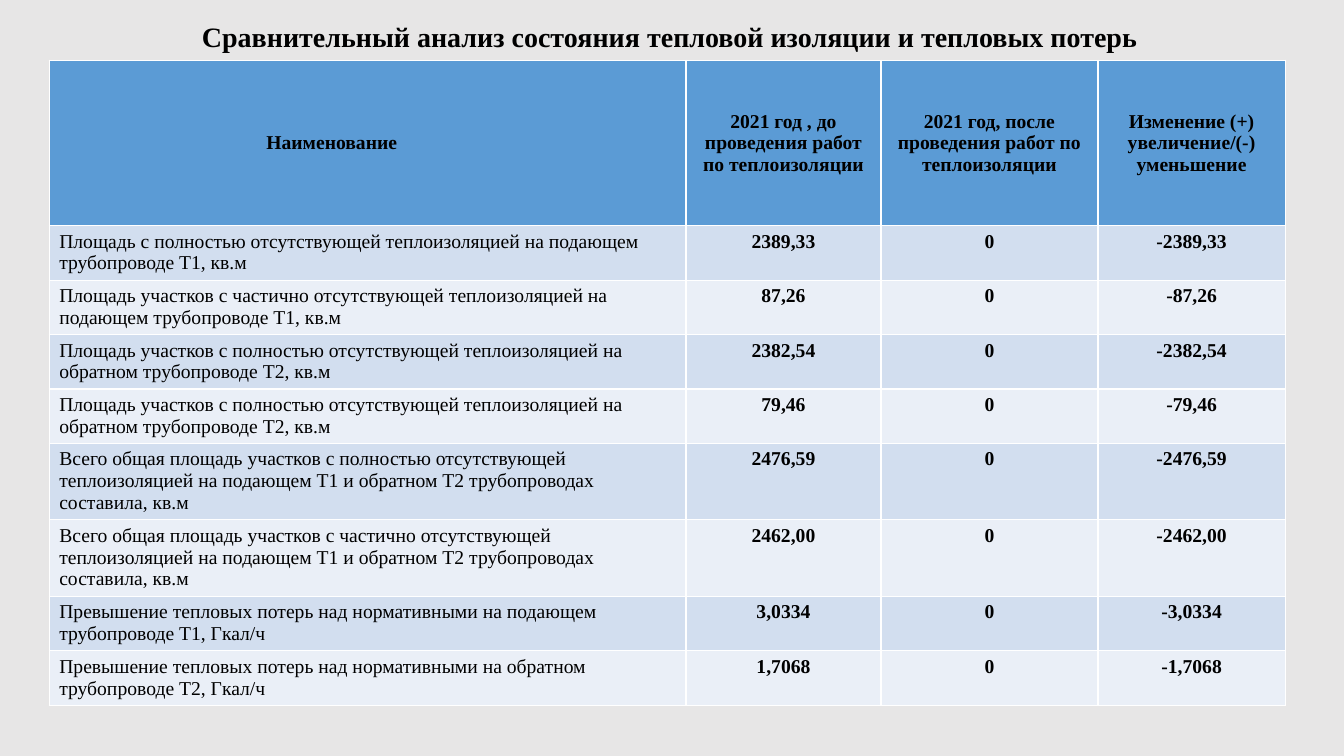
from pptx import Presentation
from pptx import util as u
from pptx.dml import color
from pptx.enum import text


def paint(fill, tone):
    fill.solid()
    fill.fore_color.rgb = color.RGBColor.from_string(tone)


def style(par, size, bold, align):
    par.alignment = align
    for run in par.runs:
        font = run.font
        font.name = "Times New Roman"
        font.size = u.Pt(size)
        font.bold = bold
        paint(font.fill, "000000")


center, left = text.PP_ALIGN.CENTER, text.PP_ALIGN.LEFT
middle, top = text.MSO_ANCHOR.MIDDLE, text.MSO_ANCHOR.TOP

heads = [
    "Наименование",
    "2021 год , до проведения работ по теплоизоляции",
    "2021 год, после проведения работ по теплоизоляции",
    "Изменение (+) увеличение/(-) уменьшение",
]
items = [
    ("Площадь с полностью отсутствующей теплоизоляцией на подающем трубопроводе Т1, кв.м", "2389,33"),
    ("Площадь участков с частично отсутствующей теплоизоляцией на подающем трубопроводе Т1, кв.м", "87,26"),
    ("Площадь участков с полностью отсутствующей теплоизоляцией на обратном трубопроводе Т2, кв.м", "2382,54"),
    ("Площадь участков с полностью отсутствующей теплоизоляцией на обратном трубопроводе Т2, кв.м", "79,46"),
    ("Всего общая площадь участков с полностью отсутствующей теплоизоляцией на подающем Т1 и обратном Т2 "
     "трубопроводах составила, кв.м", "2476,59"),
    ("Всего общая площадь участков с частично отсутствующей теплоизоляцией на подающем Т1 и обратном Т2 "
     "трубопроводах составила, кв.м", "2462,00"),
    ("Превышение тепловых потерь над нормативными на подающем трубопроводе Т1, Гкал/ч", "3,0334"),
    ("Превышение тепловых потерь над нормативными на обратном трубопроводе Т2, Гкал/ч", "1,7068"),
]
rows = [heads] + [[name, value, "0", "-" + value] for name, value in items]
widths = [16.05, 4.91, 5.47, 4.72]
heights = [4.17] + [1.37] * 4 + [1.93] * 2 + [1.37] * 2

deck = Presentation()
deck.slide_width, deck.slide_height = u.Cm(33.87), u.Cm(19.05)
slide = deck.slides.add_slide(deck.slide_layouts[5])
paint(slide.background.fill, "E7E6E6")

title = slide.shapes.title
title.left, title.top = u.Cm(3.2), u.Cm(0.38)
title.width, title.height = u.Cm(27.36), u.Cm(1.17)
frame = title.text_frame
frame.text = "Сравнительный анализ состояния тепловой изоляции и тепловых потерь"
frame.vertical_anchor = middle
frame.auto_size = text.MSO_AUTO_SIZE.NONE
frame.paragraphs[0].line_spacing = 0.9
style(frame.paragraphs[0], 20, True, center)

table = slide.shapes.add_table(
    len(rows), len(widths), u.Cm(1.24), u.Cm(1.52), u.Cm(sum(widths)), u.Cm(sum(heights))
).table
for col, width in zip(table.columns, widths):
    col.width = u.Cm(width)
for r, row in enumerate(rows):
    table.rows[r].height = u.Cm(heights[r])
    tone = "5B9BD5" if r == 0 else "D2DEEF" if r % 2 else "EAEFF7"
    for c, words in enumerate(row):
        cell = table.cell(r, c)
        cell.text_frame.text = words
        cell.vertical_anchor = top if r else middle
        label = r > 0 and c == 0
        style(cell.text_frame.paragraphs[0], 14, not label, left if label else center)
        paint(cell.fill, tone)
table.cell(0, 0).margin_right = u.Cm(2.06)

deck.save("out.pptx")
